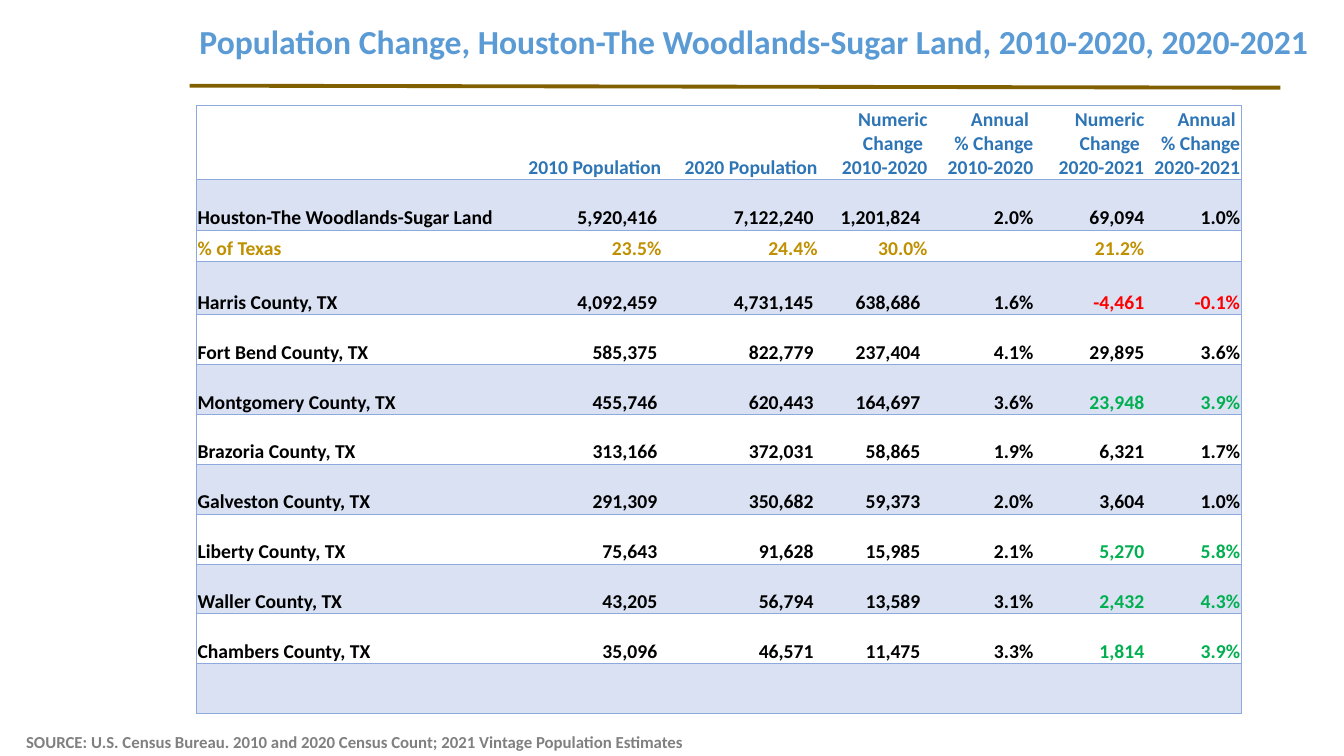
import pptx
import pptx.dml.color
import pptx.enum.shapes
import pptx.enum.text
import pptx.oxml
import pptx.oxml.ns
import pptx.util

SCALE = 4572
BLUE, BLACK, GOLD = "2E75B6", "000000", "BF9000"
RED, GREEN, EDGE, BAND = "FF0000", "00B050", "8EA9DB", "D9E1F2"
ALIGN = pptx.enum.text.PP_ALIGN
ANCHOR = pptx.enum.text.MSO_ANCHOR
PLAIN = "{2D5ABB26-0587-4C30-8999-92F81FD0307C}"

WIDTHS = [614, 310, 310, 218, 210, 220, 190]
HEIGHTS = [148, 100, 54, 106] + [99] * 8
INSETS = [2, 10, 10, 16, 2, 2, 2]
ROWS = [
    (BLUE, BLUE, ["", "2010 Population", "2020 Population",
                  "Numeric Change \n2010-2020", "Annual \n% Change 2010-2020",
                  "Numeric Change \n2020-2021", "Annual \n% Change 2020-2021"]),
    (BLACK, BLACK, ["Houston-The Woodlands-Sugar Land", "5,920,416", "7,122,240",
                    "1,201,824", "2.0%", "69,094", "1.0%"]),
    (GOLD, GOLD, ["% of Texas", "23.5%", "24.4%", "30.0%", "", "21.2%", ""]),
    (BLACK, RED, ["Harris County, TX", "4,092,459", "4,731,145",
                  "638,686", "1.6%", "-4,461", "-0.1%"]),
    (BLACK, BLACK, ["Fort Bend County, TX", "585,375", "822,779",
                    "237,404", "4.1%", "29,895", "3.6%"]),
    (BLACK, GREEN, ["Montgomery County, TX", "455,746", "620,443",
                    "164,697", "3.6%", "23,948", "3.9%"]),
    (BLACK, BLACK, ["Brazoria County, TX", "313,166", "372,031",
                    "58,865", "1.9%", "6,321", "1.7%"]),
    (BLACK, BLACK, ["Galveston County, TX", "291,309", "350,682",
                    "59,373", "2.0%", "3,604", "1.0%"]),
    (BLACK, GREEN, ["Liberty County, TX", "75,643", "91,628",
                    "15,985", "2.1%", "5,270", "5.8%"]),
    (BLACK, GREEN, ["Waller County, TX", "43,205", "56,794",
                    "13,589", "3.1%", "2,432", "4.3%"]),
    (BLACK, GREEN, ["Chambers County, TX", "35,096", "46,571",
                    "11,475", "3.3%", "1,814", "3.9%"]),
    (BLACK, BLACK, [""] * 7),
]


def px(count):
    return pptx.util.Emu(count * SCALE)


def tint(code):
    return pptx.dml.color.RGBColor.from_string(code)


def assign(target, values):
    for name, value in values.items():
        setattr(target, name, value)


def write(para, text, size, color):
    para.text = text
    for run in para.runs or [para.add_run()]:
        assign(run.font, {"name": "Calibri", "size": pptx.util.Pt(size), "bold": True})
        run.font.color.rgb = tint(color)


def add_text(slide, place, text, size, color, anchor, lead):
    frame = slide.shapes.add_textbox(*map(px, place)).text_frame
    assign(frame, {"word_wrap": True, "vertical_anchor": anchor})
    para = frame.paragraphs[0]
    para.line_spacing = lead
    write(para, text, size, color)


def add_rule(slide, start, end, color, width):
    rule = slide.shapes.add_connector(
        pptx.enum.shapes.MSO_CONNECTOR.STRAIGHT, *map(px, start + end))
    rule.line.color.rgb = tint(color)
    rule.line.width = pptx.util.Pt(width)
    rule._element.spPr.append(pptx.oxml.parse_xml(
        f'<a:effectLst {pptx.oxml.ns.nsdecls("a")}/>'))


def add_edge(cell, side):
    cell._tc.get_or_add_tcPr().append(pptx.oxml.parse_xml(
        f'<a:ln{side} {pptx.oxml.ns.nsdecls("a")} w="6350"><a:solidFill>'
        f'<a:srgbClr val="{EDGE}"/></a:solidFill></a:ln{side}>'))


def fill_cell(cell, row, col, text, color):
    final = len(WIDTHS) - 1
    for side in ("L" if col == 0 else "") + ("R" if col == final else "") + "TB":
        add_edge(cell, side)
    if row % 2:
        cell.fill.solid()
        cell.fill.fore_color.rgb = tint(BAND)
    else:
        cell.fill.background()
    inset = 2 if text.endswith("%") or row == 0 else INSETS[col]
    assign(cell, {"margin_left": px(2), "margin_right": px(inset), "margin_top": px(2),
                  "margin_bottom": 0, "vertical_anchor": ANCHOR.BOTTOM})
    para = cell.text_frame.paragraphs[0]
    para.alignment = ALIGN.RIGHT if col else ALIGN.LEFT
    write(para, text, 14, color)


def add_grid(slide, left, top):
    place = map(px, (left, top, sum(WIDTHS), sum(HEIGHTS)))
    table = slide.shapes.add_table(len(ROWS), len(WIDTHS), *place).table
    assign(table, {"first_row": False, "horz_banding": False})
    table._tbl.tblPr.find(pptx.oxml.ns.qn("a:tableStyleId")).text = PLAIN
    for col, width in enumerate(WIDTHS):
        table.columns[col].width = px(width)
    for row, (main_tint, change, texts) in enumerate(ROWS):
        table.rows[row].height = px(HEIGHTS[row])
        for col, text in enumerate(texts):
            color = change if col > 4 else main_tint
            fill_cell(table.cell(row, col), row, col, text, color)


def main():
    deck = pptx.Presentation()
    assign(deck, {"slide_width": px(2666), "slide_height": px(1500)})
    slide = deck.slides.add_slide(deck.slide_layouts[6])
    add_rule(slide, (376, 170), (2540, 174), "806000", 2.75)
    add_text(slide, (376, 0, 2244, 172),
             "Population Change, Houston-The Woodlands-Sugar Land, 2010-2020, 2020-2021",
             24, "5B9BD5", ANCHOR.MIDDLE, 0.9)
    add_text(slide, (32, 1442, 1750, 60),
             "SOURCE: U.S. Census Bureau. 2010 and 2020 Census Count; "
             "2021 Vintage Population Estimates",
             12, "808080", ANCHOR.TOP, 1.0)
    add_grid(slide, 390, 208)
    deck.save("out.pptx")


if __name__ == "__main__":
    main()
